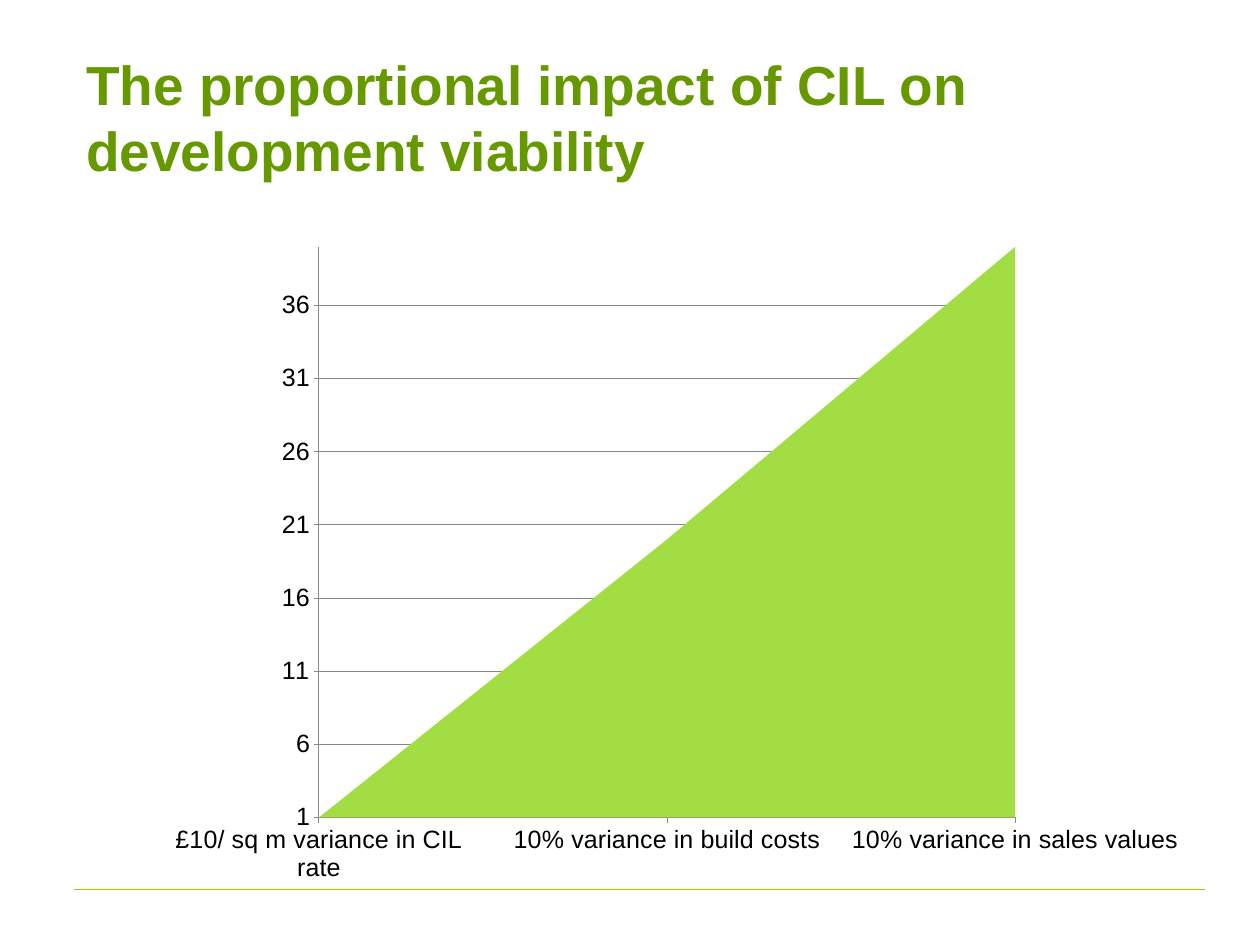
"""Build a slide with an area chart on the impact of CIL on viability."""
from lxml import etree
from pptx import Presentation
from pptx import util as u
from pptx.chart.data import CategoryChartData
from pptx.dml.color import RGBColor
from pptx.enum import chart as charts, shapes, text
from pptx.oxml import ns

TITLE = "The proportional impact of CIL on development viability"
IMPACTS = [
    ("£10/ sq m variance in CIL rate", 1),
    ("10% variance in build costs", 20),
    ("10% variance in sales values", 40),
]
PLOT_AREA = {"x": 0.18, "y": 0.02, "w": 0.65, "h": 0.88}

FONT = "Arial"
DARK_GREEN = RGBColor(0x66, 0x99, 0x00)
LINE_GREEN = RGBColor(0x99, 0xCC, 0x00)
AREA_GREEN = RGBColor(0xA2, 0xDD, 0x43)
GREY = RGBColor(0x87, 0x87, 0x87)
BLACK = RGBColor(0, 0, 0)


def format_font(font, size, color, bold=False):
    font.name = FONT
    font.size = u.Pt(size)
    font.bold = bold
    font.color.rgb = color


def write_text(shape, content, size, color, bold=False):
    frame = shape.text_frame
    frame.word_wrap = True
    frame.auto_size = text.MSO_AUTO_SIZE.NONE
    frame.vertical_anchor = text.MSO_ANCHOR.MIDDLE
    frame.margin_left = frame.margin_right = u.Cm(0.33)
    frame.margin_top = frame.margin_bottom = u.Cm(0.18)
    paragraph = frame.paragraphs[0]
    paragraph.alignment = text.PP_ALIGN.LEFT
    run = paragraph.add_run()
    run.text = content
    format_font(run.font, size, color, bold)


def add_footer_line(slide):
    line = slide.shapes.add_connector(
        shapes.MSO_CONNECTOR.STRAIGHT, u.Cm(2.1), u.Cm(25.1), u.Cm(34), u.Cm(25.1))
    line.line.color.rgb = LINE_GREEN
    line.line.width = u.Pt(0.75)
    etree.SubElement(line._element.spPr, ns.qn("a:effectLst"))


def place_plot_area(chart):
    plot_area = chart._chartSpace.chart.plotArea
    for old_layout in plot_area.findall(ns.qn("c:layout")):
        plot_area.remove(old_layout)
    layout = etree.Element(ns.qn("c:layout"))
    plot_area.insert(0, layout)
    manual = etree.SubElement(layout, ns.qn("c:manualLayout"))
    settings = [("layoutTarget", "inner"), ("xMode", "edge"), ("yMode", "edge")]
    for name, value in settings + list(PLOT_AREA.items()):
        etree.SubElement(manual, ns.qn(f"c:{name}")).set("val", str(value))


def add_impact_chart(slide):
    data = CategoryChartData()
    data.categories = [name for name, value in IMPACTS]
    data.add_series("Series 1", [value for name, value in IMPACTS])
    chart = slide.shapes.add_chart(
        charts.XL_CHART_TYPE.AREA, u.Cm(3.56), u.Cm(6.6), u.Cm(30.23), u.Cm(18.31), data).chart
    chart.has_legend = chart.has_title = False
    format_font(chart.font, 10, BLACK)
    chart.plots[0].vary_by_categories = False
    fill = chart.plots[0].series[0].format.fill
    fill.solid()
    fill.fore_color.rgb = AREA_GREEN

    values = chart.value_axis
    values.minimum_scale, values.maximum_scale, values.major_unit = 1, 40, 5
    values.has_major_gridlines = True
    values.tick_labels.number_format = "General"
    values.tick_labels.number_format_is_linked = False
    for axis in (chart.category_axis, values):
        axis.major_tick_mark = charts.XL_TICK_MARK.OUTSIDE
        axis.minor_tick_mark = charts.XL_TICK_MARK.NONE
        format_font(axis.tick_labels.font, 20, BLACK)
    for part in (chart.category_axis, values, values.major_gridlines):
        part.format.line.color.rgb = GREY
        part.format.line.width = u.Pt(0.75)
    chart.category_axis.has_major_gridlines = False
    values._element.find(ns.qn("c:crossBetween")).set("val", "midCat")
    place_plot_area(chart)


def main():
    presentation = Presentation()
    presentation.slide_width, presentation.slide_height = u.Cm(35.56), u.Cm(26.67)
    slide = presentation.slides.add_slide(presentation.slide_layouts[5])
    add_footer_line(slide)
    title = slide.shapes.title
    title.left, title.top, title.width, title.height = (
        u.Cm(2.1), u.Cm(1.07), u.Cm(32), u.Cm(4.45))
    write_text(title, TITLE, size=44, color=DARK_GREEN, bold=True)
    add_impact_chart(slide)
    presentation.save("out.pptx")


if __name__ == "__main__":
    main()
